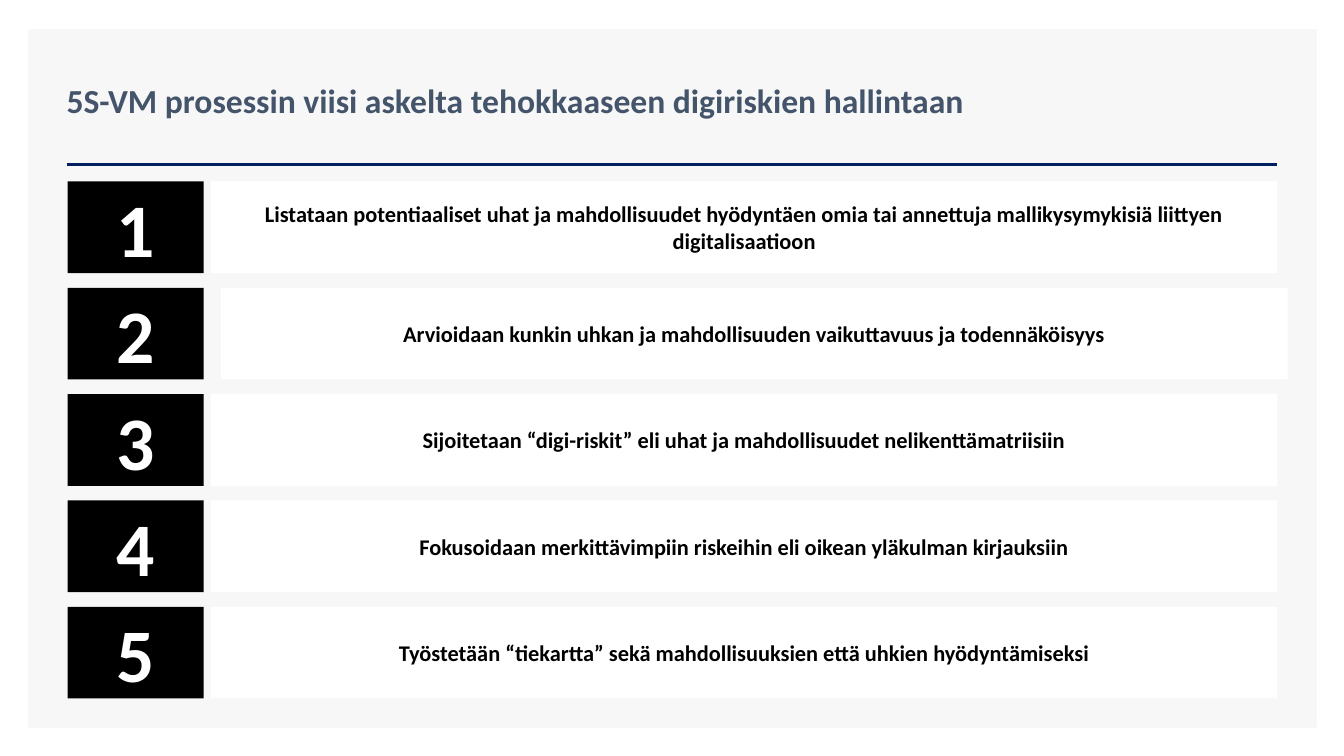
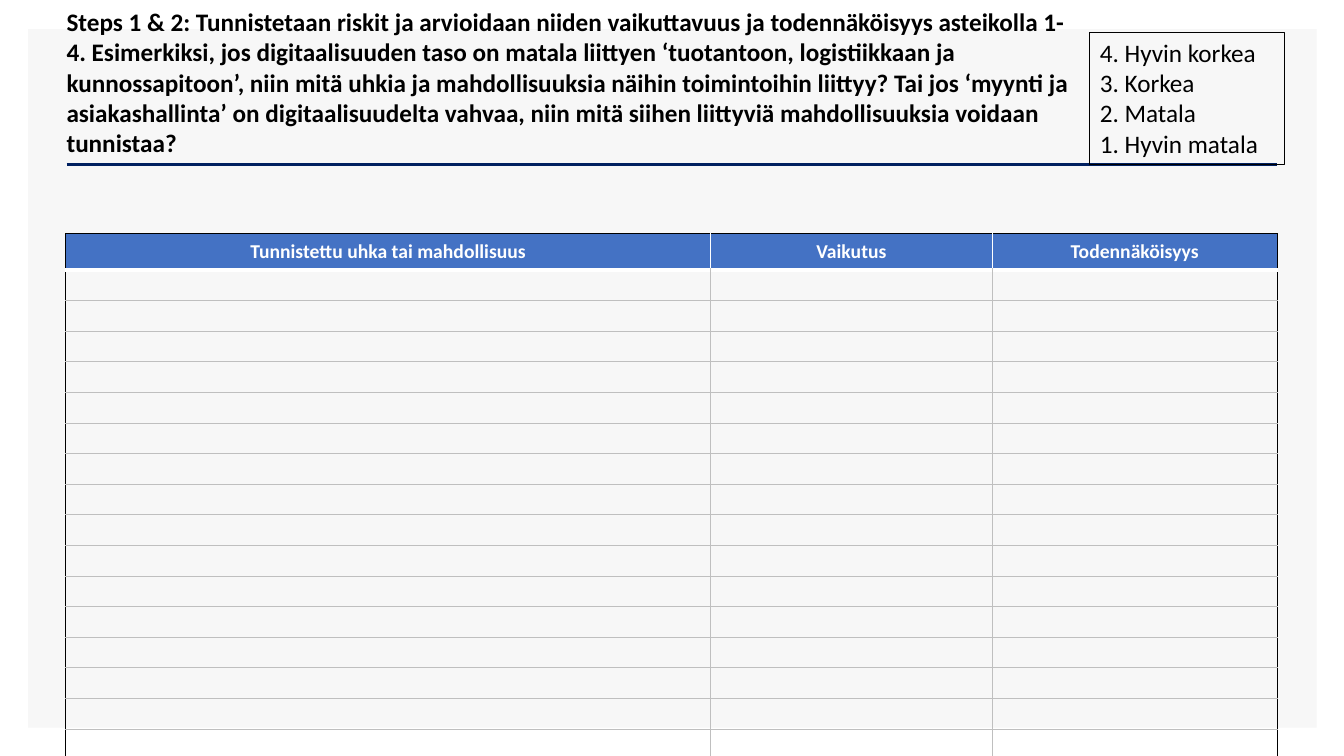
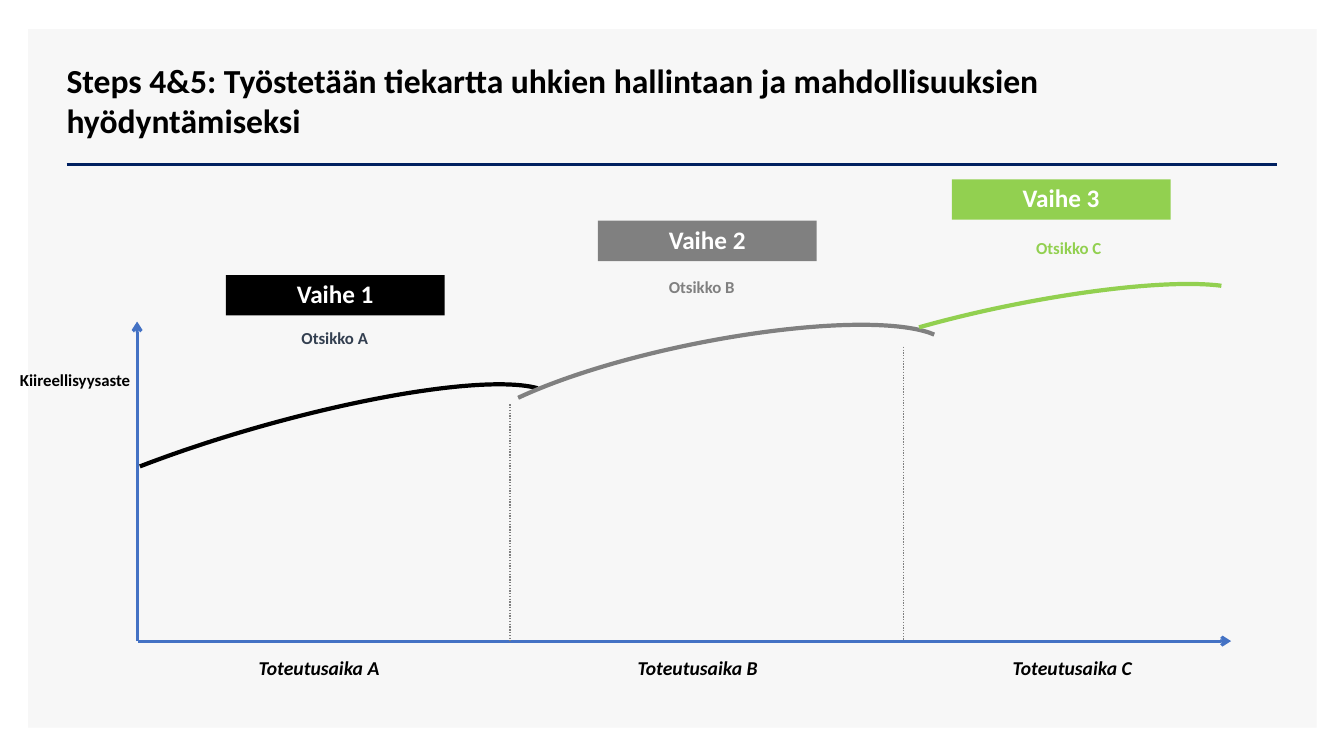
"""Build three slides on the five-step digital risk process."""
from dataclasses import dataclass
from typing import Optional

from lxml import etree
from pptx import Presentation
from pptx import util as u
from pptx.dml.color import RGBColor
from pptx.enum import dml, shapes, text
from pptx.oxml.ns import qn

Box = tuple[float, float, float, float]
Edge = tuple[RGBColor, float]

FONT = "Calibri"
BLACK = RGBColor(0x00, 0x00, 0x00)
WHITE = RGBColor(0xFF, 0xFF, 0xFF)
PANEL = RGBColor(0xF7, 0xF7, 0xF7)
NAVY = RGBColor(0x00, 0x20, 0x60)
SLATE = RGBColor(0x44, 0x54, 0x6A)
INK = RGBColor(0x33, 0x3F, 0x50)
BLUE = RGBColor(0x44, 0x72, 0xC4)
GRAY = RGBColor(0x80, 0x80, 0x80)
SILVER = RGBColor(0xBF, 0xBF, 0xBF)
GREEN = RGBColor(0x92, 0xD0, 0x50)

TITLE = (0.56, 0.4, 12.11, 1.19)
MIDDLE = text.MSO_ANCHOR.MIDDLE
CENTER = text.PP_ALIGN.CENTER
LEFT = text.PP_ALIGN.LEFT


@dataclass
class Label:
    words: str
    box: Box
    size: float
    ink: RGBColor = BLACK
    fill: Optional[RGBColor] = None
    edge: Optional[RGBColor] = None
    pad: tuple[float, float] = (0.1, 0.05)
    align: text.PP_ALIGN = CENTER
    anchor: text.MSO_ANCHOR = text.MSO_ANCHOR.TOP
    before: float = 0
    after: float = 0
    lead: float = 1.0
    bold: bool = True
    slant: bool = False
    wrap: bool = True


@dataclass
class Line:
    start: tuple[float, float]
    end: tuple[float, float]
    ink: RGBColor
    width: float
    arrow: bool = False
    dots: bool = False


@dataclass
class Phase:
    name: str
    head: str
    time: str
    color: RGBColor
    ink: RGBColor
    tag: tuple[float, float]
    sub: tuple[float, float]
    span: tuple[float, float]
    arc: Box
    turn: float
    bend: tuple[float, float]


STEPS = [
    "Listataan potentiaaliset uhat ja mahdollisuudet hyödyntäen omia tai annettuja "
    "mallikysymykisiä liittyen digitalisaatioon",
    "Arvioidaan kunkin uhkan ja mahdollisuuden vaikuttavuus ja todennäköisyys",
    "Sijoitetaan “digi-riskit” eli uhat ja mahdollisuudet nelikenttämatriisiin",
    "Fokusoidaan merkittävimpiin riskeihin eli oikean yläkulman kirjauksiin",
    "Työstetään “tiekartta” sekä mahdollisuuksien että uhkien hyödyntämiseksi",
]
SCALE = "4. Hyvin korkea\n3. Korkea\n2. Matala\n1. Hyvin matala"
HEADS = ["Tunnistettu uhka tai mahdollisuus", "Vaikutus", "Todennäköisyys"]
PHASES = [
    Phase("Vaihe 1", "Otsikko A", "Toteutusaika A", BLACK, INK, (2.24, 2.73), (1.71, 3.2),
          (2.4, 1.53), (-0.14, 4.21, 5.75, 1.09), 344.2, (120.73, 213.99)),
    Phase("Vaihe 2", "Otsikko B", "Toteutusaika B", GRAY, GRAY, (5.93, 2.19), (5.35, 2.7),
          (6.21, 1.42), (4.54, 3.4, 4.92, 1.09), 348.6, (114.8, 213.59)),
    Phase("Vaihe 3", "Otsikko C", "Toteutusaika C", GREEN, GREEN, (9.44, 1.78), (8.99, 2.31),
          (9.93, 1.41), (7.77, 3.02, 4.68, 0.82), 348.6, (121.09, 212.92)),
]
AXES = [
    Line((1.36, 6.36), (1.36, 3.19), BLUE, 2.25, arrow=True),
    Line((1.37, 6.36), (12.21, 6.36), BLUE, 2.25, arrow=True),
    Line((5.06, 4.01), (5.06, 6.36), GRAY, 1, dots=True),
    Line((8.96, 3.44), (8.96, 6.36), GRAY, 1, dots=True),
]


def inch(box: Box) -> list[u.Length]:
    return [u.Inches(side) for side in box]


def place(shape, box: Box) -> None:
    shape.left, shape.top, shape.width, shape.height = inch(box)


def style(para, size: float, ink: RGBColor, bold: bool = True, slant: bool = False) -> None:
    font = para.font
    font.name, font.size, font.bold, font.italic = FONT, u.Pt(size), bold, slant
    font.color.rgb = ink


def label(slide, item: Label):
    if item.fill is None and item.edge is None:
        shape = slide.shapes.add_textbox(*inch(item.box))
    else:
        shape = slide.shapes.add_shape(shapes.MSO_SHAPE.RECTANGLE, *inch(item.box))
        shape.shadow.inherit = False
    for part, color in ((shape.fill, item.fill), (shape.line.fill, item.edge)):
        if color is None:
            part.background()
        else:
            part.solid()
            part.fore_color.rgb = color
    if item.edge is not None:
        shape.line.width = u.Pt(0.75)
    frame = shape.text_frame
    frame.word_wrap, frame.vertical_anchor = item.wrap, item.anchor
    frame.margin_left = frame.margin_right = u.Inches(item.pad[0])
    frame.margin_top = frame.margin_bottom = u.Inches(item.pad[1])
    frame.text = item.words
    for para in frame.paragraphs:
        para.alignment, para.line_spacing = item.align, item.lead
        para.space_before, para.space_after = u.Pt(item.before), u.Pt(item.after)
        style(para, item.size, item.ink, item.bold, item.slant)
    return shape


def line(slide, item: Line):
    link = slide.shapes.add_connector(
        shapes.MSO_CONNECTOR.STRAIGHT, *inch(item.start + item.end))
    link.line.color.rgb, link.line.width = item.ink, u.Pt(item.width)
    if item.dots:
        link.line.dash_style = dml.MSO_LINE.ROUND_DOT
    if item.arrow:
        etree.SubElement(link.get_or_add_ln(), qn("a:tailEnd"), type="arrow")
    etree.SubElement(link.element.spPr, qn("a:effectLst"))
    return link


def frame(layout, slide) -> None:
    for holder in list(layout.placeholders):
        if holder.placeholder_format.idx:
            holder.element.getparent().remove(holder.element)
        else:
            place(holder, TITLE)
    band = label(slide, Label("", (0.28, 0.29, 12.78, 6.93), 18, fill=PANEL))
    rule = line(slide, Line((0.66, 1.63), (12.67, 1.63), NAVY, 2))
    for spot, part in enumerate((band, rule), 2):
        layout.shapes.element.insert(spot, part.element)


def title(slide, words: str, size: float = 24, ink: RGBColor = BLACK, box: Box = TITLE) -> None:
    head = slide.shapes.title
    place(head, box)
    body = head.text_frame
    body.text, body.word_wrap = words, True
    body.auto_size, body.vertical_anchor = text.MSO_AUTO_SIZE.NONE, MIDDLE
    para = body.paragraphs[0]
    para.alignment = LEFT
    style(para, size, ink)


def border(cell, edges: dict[str, Edge]) -> None:
    props = cell._tc.get_or_add_tcPr()
    for side, (color, width) in edges.items():
        ln = etree.SubElement(props, qn(f"a:ln{side}"), w=str(u.Pt(width)))
        fill = etree.SubElement(ln, qn("a:solidFill"))
        etree.SubElement(fill, qn("a:srgbClr"), val=str(color))


def steps(slide) -> None:
    title(slide, "5S-VM prosessin viisi askelta tehokkaaseen digiriskien hallintaan", ink=SLATE)
    pitch = (6.02 - 1.8) / (len(STEPS) - 1)
    for row, words in enumerate(STEPS):
        top = 1.8 + row * pitch
        left = 2.19 if row == 1 else 2.09
        label(slide, Label(words, (left, top, 10.58, 0.91), 16, fill=WHITE,
                           pad=(0.1, 0.1), anchor=MIDDLE))
        label(slide, Label(str(row + 1), (0.67, top, 1.35, 0.91), 54, WHITE, BLACK,
                           pad=(0, 0.1), anchor=MIDDLE, before=9))


def risks(slide) -> None:
    title(slide, "Steps 1 & 2: Tunnistetaan riskit ja arvioidaan niiden vaikuttavuus ja "
          "todennäköisyys asteikolla 1-4. Esimerkiksi, jos digitaalisuuden taso on matala "
          "liittyen ‘tuotantoon, logistiikkaan ja kunnossapitoon’, niin mitä uhkia ja "
          "mahdollisuuksia näihin toimintoihin liittyy? Tai jos ‘myynti ja asiakashallinta’ "
          "on digitaalisuudelta vahvaa, niin mitä siihen liittyviä mahdollisuuksia voidaan "
          "tunnistaa?", 18, box=(0.56, 0.22, 10.18, 1.19))
    count, top, high, foot = 17, 2.32, 0.36, 7.54
    grid = slide.shapes.add_table(
        count, len(HEADS), *inch((0.65, top, 12.03, foot - top))).table
    for col, width in zip(grid.columns, (6.4, 2.79, 2.83)):
        col.width = u.Inches(width)
    outer, inner = (BLACK, 0.75), (SILVER, 0.75)
    thin, thick = (WHITE, 1), (WHITE, 3)
    for r, row in enumerate(grid.rows):
        row.height = u.Inches((foot - top - high) / (count - 1) if r else high)
        mid = inner if r else thin
        for c, cell in enumerate(row.cells):
            border(cell, {
                "L": mid if c else outer,
                "R": mid if c < len(HEADS) - 1 else outer,
                "T": {0: outer, 1: thick}.get(r, inner),
                "B": {0: thick, count - 1: outer}.get(r, inner),
            })
            cell.margin_top = cell.margin_bottom = 0
            para = cell.text_frame.paragraphs[0]
            if r:
                cell.fill.background()
                style(para, 12, BLACK, False)
                continue
            cell.fill.solid()
            cell.fill.fore_color.rgb = BLUE
            cell.vertical_anchor = MIDDLE
            para.text, para.alignment = HEADS[c], CENTER
            style(para, 14, WHITE)
    label(slide, Label(SCALE, (10.81, 0.32, 1.93, 1.31), 18, edge=BLACK,
                       align=LEFT, bold=False))


def phase(slide, item: Phase) -> None:
    arc = slide.shapes.add_shape(shapes.MSO_SHAPE.ARC, *inch(item.arc))
    arc.shadow.inherit = False
    arc.rotation = item.turn
    arc.adjustments[0], arc.adjustments[1] = item.bend
    arc.fill.background()
    arc.line.color.rgb, arc.line.width = item.color, u.Pt(3)
    label(slide, Label(item.name, (*item.tag, 2.17, 0.4), 18, WHITE, item.color,
                       pad=(0, 0.08), anchor=MIDDLE, before=9, lead=0.9))
    label(slide, Label(item.head, (*item.sub, 3.22, 0.3), 12, item.ink, after=6))
    left, width = item.span
    label(slide, Label(item.time, (left, 6.46, width, 0.34), 14, slant=True, wrap=False))


def roadmap(slide) -> None:
    title(slide, "Steps 4&5: Työstetään tiekartta uhkien hallintaan ja mahdollisuuksien "
          "hyödyntämiseksi")
    for axis in AXES:
        line(slide, axis)
    label(slide, Label("Kiireellisyysaste", (-0.15, 3.62, 1.79, 0.31), 12, pad=(0, 0.05)))
    for item in PHASES:
        phase(slide, item)


def main() -> None:
    deck = Presentation()
    deck.slide_width, deck.slide_height = u.Inches(13.33), u.Inches(7.5)
    layout = deck.slide_layouts[5]
    for page, draw in enumerate((steps, risks, roadmap)):
        slide = deck.slides.add_slide(layout)
        if page == 0:
            frame(layout, slide)
        draw(slide)
    deck.save("out.pptx")


if __name__ == "__main__":
    main()
